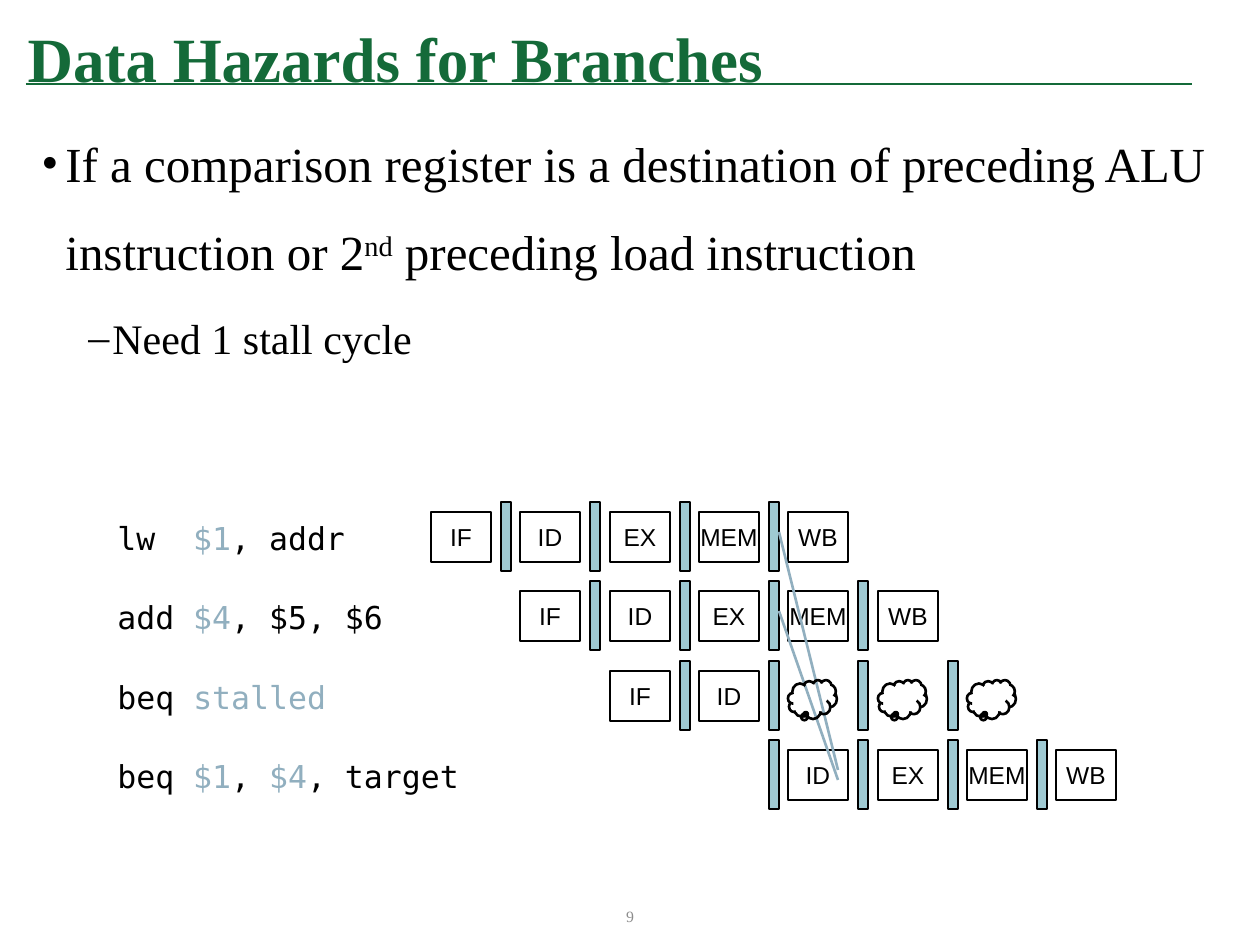
from lxml.etree import SubElement
from pptx import Presentation
from pptx.dml.color import RGBColor
from pptx.enum.shapes import MSO_CONNECTOR, MSO_SHAPE
from pptx.enum.text import MSO_ANCHOR, PP_ALIGN
from pptx.oxml.ns import qn
from pptx.util import Emu, Pt

COLORS = {"green": "146A39", "black": "000000", "gray": "8C8C8C",
          "accent": "91AFBF", "register": "9FCAD3"}
SERIF, SANS, MONO = "Times New Roman", "Arial", "DejaVu Sans Mono"


def px(*lengths):
    return [Emu(round(length * 914400 / 126)) for length in lengths]


def write(paragraph, text, size, font, color="black", bold=False, superscript=False):
    run = paragraph.add_run()
    run.text = text
    run.font.size = Pt(size)
    run.font.name = font
    run.font.bold = bold
    run.font.color.rgb = RGBColor.from_string(COLORS[color])
    if superscript:
        run.font._element.set("baseline", "30000")


presentation = Presentation()
presentation.slide_width, presentation.slide_height = px(1260, 945)
slide = presentation.slides.add_slide(presentation.slide_layouts[5])
shapes = slide.shapes

# Title
title = shapes.title
title.left, title.top, title.width, title.height = px(15, 9, 1158, 92)
title.text_frame.vertical_anchor = MSO_ANCHOR.BOTTOM
title.text_frame.paragraphs[0].alignment = PP_ALIGN.LEFT
write(title.text_frame.paragraphs[0], "Data Hazards for Branches", 36, SERIF, "green", bold=True)

# Bulleted text
body = shapes.add_textbox(*px(29, 98, 1205, 784)).text_frame
body.word_wrap = True
first, second = body.paragraphs[0], body.add_paragraph()
second.level = 1
second.space_before = Pt(3.7)
for paragraph, bullet, margin in ((first, "•", 24), (second, "–", 71)):
    paragraph.line_spacing = 1.5
    properties = paragraph._p.get_or_add_pPr()
    properties.set("marL", str(px(margin)[0]))
    properties.set("indent", str(px(-24)[0]))
    SubElement(properties, qn("a:buFont")).set("typeface", SERIF)
    SubElement(properties, qn("a:buChar")).set("char", bullet)
write(first, "If a comparison register is a destination of preceding ALU instruction or 2", 28, SERIF)
write(first, "nd", 28, SERIF, superscript=True)
write(first, " preceding load instruction", 28, SERIF)
write(second, "Need 1 stall cycle", 24, SERIF)

# Page number
page = shapes.add_textbox(*px(470, 891, 320, 50)).text_frame
page.vertical_anchor = MSO_ANCHOR.MIDDLE
page.paragraphs[0].alignment = PP_ALIGN.CENTER
write(page.paragraphs[0], "9", 9, SERIF, "gray")

# Pipeline: code runs (text, color), column of the first stage, stages
LEFT, TOP, COLUMN_STEP, ROW_STEP = 431, 512, 89.3, 79.3
instructions = [
    ([("lw  ", "black"), ("$1", "accent"), (", addr", "black")],
     234 + 19, 0, ["IF", "ID", "EX", "MEM", "WB"]),
    ([("add ", "black"), ("$4", "accent"), (", $5, $6", "black")],
     292, 1, ["IF", "ID", "EX", "MEM", "WB"]),
    ([("beq ", "black"), ("stalled", "accent")],
     234, 2, ["IF", "ID"]),
    ([("beq ", "black"), ("$1", "accent"), (", ", "black"), ("$4", "accent"), (", target", "black")],
     368, 4, ["ID", "EX", "MEM", "WB"]),
]
for row, (code, code_width, start, stages) in enumerate(instructions):
    top = round(TOP + row * ROW_STEP)
    label = shapes.add_textbox(*px(105, top + 1, code_width, 50)).text_frame
    label.word_wrap = False
    for text, color in code:
        write(label.paragraphs[0], text, 18, MONO, color)

    for column, stage in enumerate(stages, start):
        box = shapes.add_shape(MSO_SHAPE.RECTANGLE,
                               *px(round(LEFT + column * COLUMN_STEP), top, 60, 50))
        box.shadow.inherit = False
        box.fill.background()
        box.line.color.rgb = RGBColor.from_string(COLORS["black"])
        box.line.width = Pt(1.5)
        box.text_frame.word_wrap = False
        box.text_frame.vertical_anchor = MSO_ANCHOR.MIDDLE
        box.text_frame.paragraphs[0].alignment = PP_ALIGN.CENTER
        write(box.text_frame.paragraphs[0], stage, 14, SANS)

    # Four pipeline registers follow the row's diagonal
    for column in range(row, row + 4):
        register = shapes.add_shape(MSO_SHAPE.RECTANGLE,
                                    *px(round(LEFT + 70 + column * COLUMN_STEP), top - 10, 10, 69))
        register.shadow.inherit = False
        register.fill.solid()
        register.fill.fore_color.rgb = RGBColor.from_string(COLORS["register"])
        register.line.color.rgb = RGBColor.from_string(COLORS["black"])
        register.line.width = Pt(0.75)

# Title rule and forwarding paths
for ends, color, width in (((26, 84, 1192, 84), "green", 1),
                           ((779, 532, 838, 770), "accent", 1.5),
                           ((779, 611, 838, 780), "accent", 1.5)):
    line = shapes.add_connector(MSO_CONNECTOR.STRAIGHT, *px(*ends))
    line.line.color.rgb = RGBColor.from_string(COLORS[color])
    line.line.width = Pt(width)
    SubElement(line._element.spPr, qn("a:effectLst"))

# Bubbles in the stalled row
for column in range(4, 7):
    bubble = shapes.add_shape(MSO_SHAPE.CLOUD_CALLOUT,
                              *px(round(LEFT + column * COLUMN_STEP), 680, 49, 39))
    bubble.adjustments[0], bubble.adjustments[1] = -0.13, 0.36
    bubble.shadow.inherit = False
    bubble.fill.background()
    bubble.line.color.rgb = RGBColor.from_string(COLORS["black"])
    bubble.line.width = Pt(1.5)

presentation.save("out.pptx")
